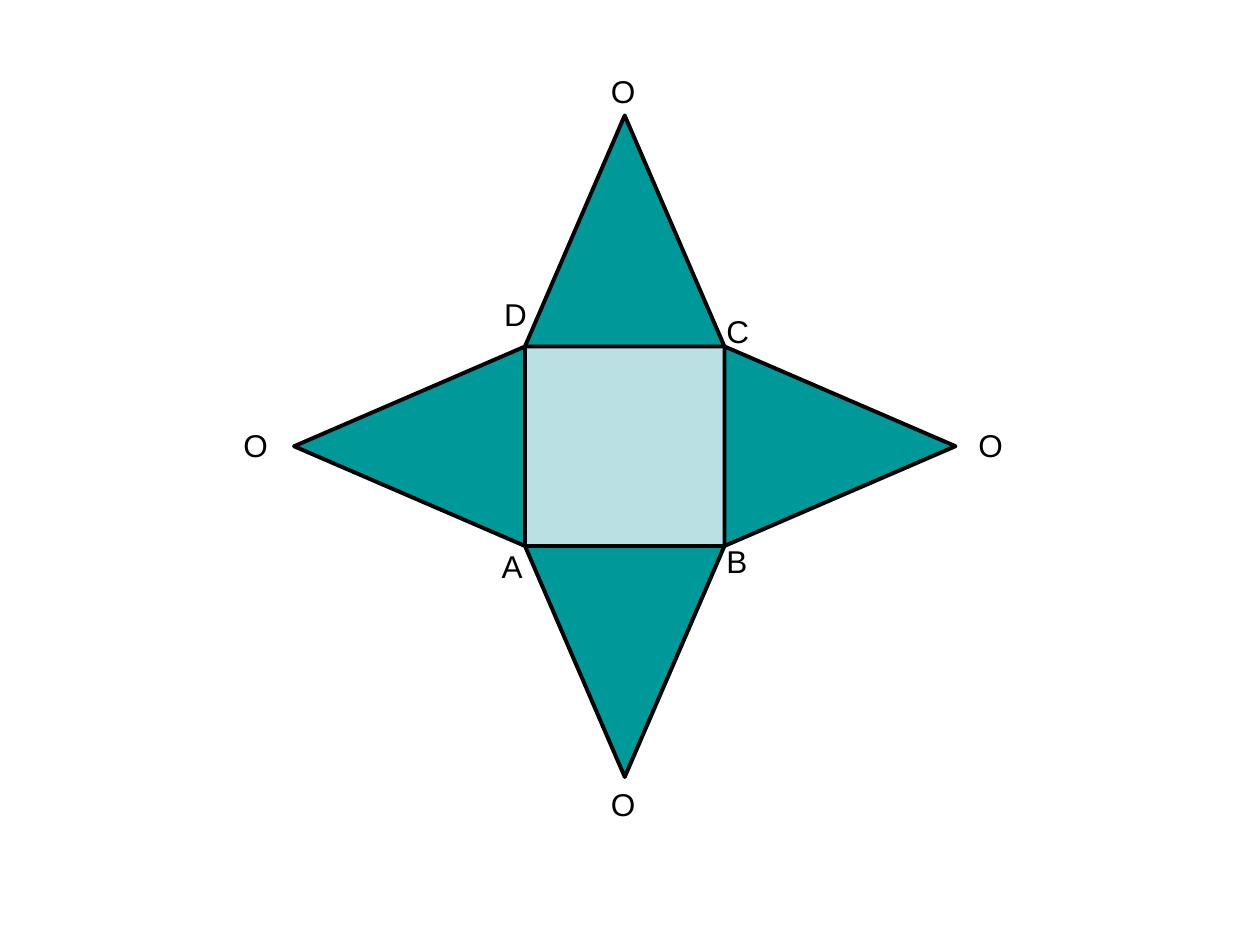
"""Build a slide with the net of a square pyramid."""
from math import cos, radians, sin

from pptx import Presentation
from pptx.dml.color import RGBColor
from pptx.enum import shapes, text
from pptx.util import Pt

THEME = {
    "ink": RGBColor.from_string("000000"),
    "base": RGBColor.from_string("BBE0E3"),
    "side": RGBColor.from_string("009999"),
    "font": "Arial",
    "size": 18,
}

deck = Presentation()
deck.slide_width, deck.slide_height = Pt(720), Pt(540)
slide = deck.slides.add_slide(deck.slide_layouts[6])


def add_label(words, left, top, width=30, wrap=True):
    box = slide.shapes.add_textbox(Pt(left), Pt(top), Pt(width), Pt(28.8))
    frame = box.text_frame
    frame.word_wrap = wrap
    frame.auto_size = text.MSO_AUTO_SIZE.SHAPE_TO_FIT_TEXT
    run = frame.paragraphs[0].add_run()
    run.text = words
    run.font.name = THEME["font"]
    run.font.size = Pt(THEME["size"])
    run.font.color.rgb = THEME["ink"]


def add_face(kind, mid_x, mid_y, high, fill, line, turn=0):
    face = slide.shapes.add_shape(
        kind, Pt(mid_x - edge / 2), Pt(mid_y - high / 2), Pt(edge), Pt(high))
    face.rotation = turn
    face.shadow.inherit = False
    face.fill.solid()
    face.fill.fore_color.rgb = fill
    face.line.color.rgb = THEME["ink"]
    face.line.width = Pt(line)


mid_x, mid_y = 357, 255
edge, slant = 114, 132
reach = (edge + slant) / 2

add_face(shapes.MSO_SHAPE.RECTANGLE, mid_x, mid_y, edge, THEME["base"], 0.75)
for turn in (0, 180, 270, 90):
    angle = radians(turn)
    add_face(shapes.MSO_SHAPE.ISOSCELES_TRIANGLE,
             mid_x + reach * sin(angle), mid_y - reach * cos(angle),
             slant, THEME["side"], 2.25, turn)

for left, top in ((132, 240), (342, 445), (552, 240), (342, 37.5)):
    add_label("O", left, top)

corners = (
    ("A", 279.5, 309, 26.5, False),
    ("B", 408, 306, 28, True),
    ("C", 408, 175, 27.5, False),
    ("D", 281, 165, 27.5, False),
)
for name, left, top, width, wrap in corners:
    add_label(name, left, top, width=width, wrap=wrap)

deck.save("out.pptx")
